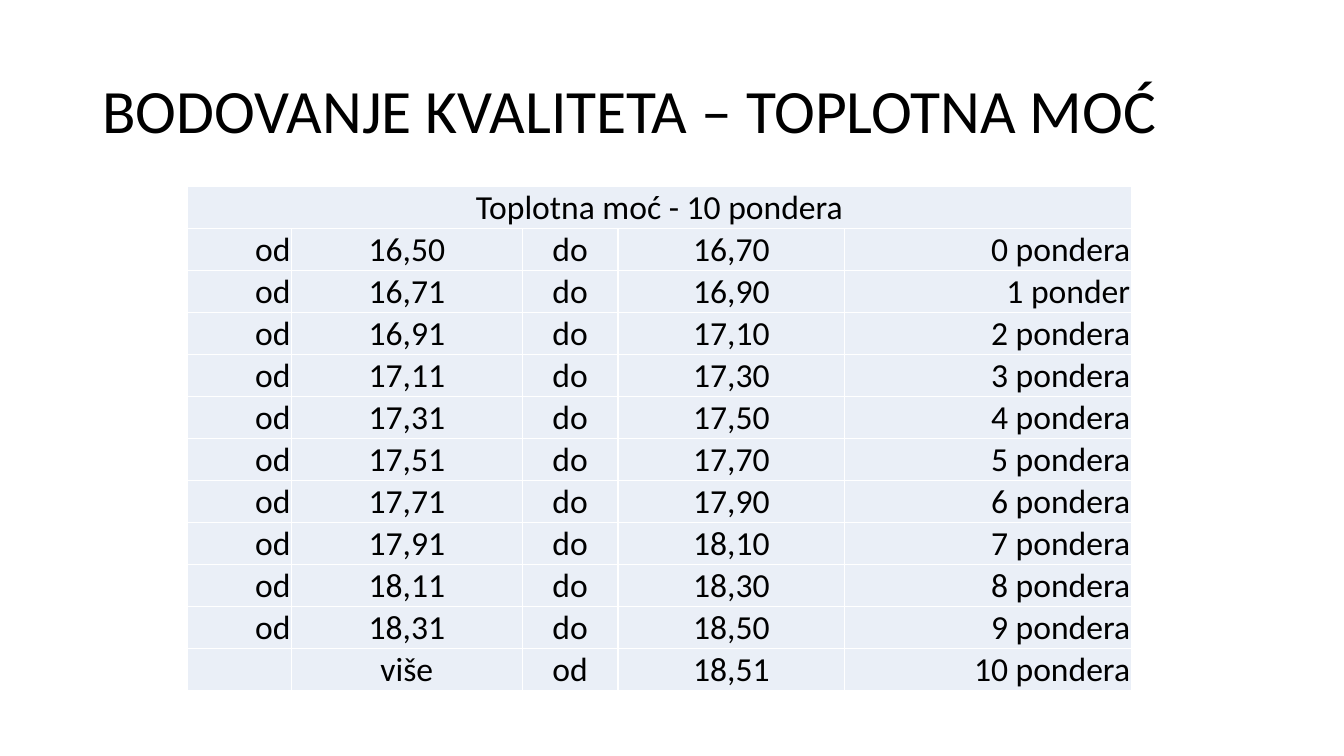
"""Build the slide that scores heating value in ten weighted bands."""
from dataclasses import dataclass

from lxml import etree
from pptx import Presentation
from pptx.dml.color import RGBColor
from pptx.enum.text import MSO_ANCHOR, MSO_AUTO_SIZE, PP_ALIGN
from pptx.oxml.ns import qn
from pptx.shapes.autoshape import Shape
from pptx.slide import Slide
from pptx.table import _Cell
from pptx.text.text import _Paragraph
from pptx.util import Pt

LEFT, CENTER, RIGHT = PP_ALIGN.LEFT, PP_ALIGN.CENTER, PP_ALIGN.RIGHT
MIDDLE, BOTTOM = MSO_ANCHOR.MIDDLE, MSO_ANCHOR.BOTTOM
NO_AUTOFIT = MSO_AUTO_SIZE.NONE
TITLE_ONLY_LAYOUT = 5


@dataclass(frozen=True)
class Theme:
    font: str = "Calibri"
    ink: str = "000000"
    cell_fill: str = "EAEFF7"
    border: str = "FFFFFF"
    border_width: float = 1
    title_size: float = 44
    table_size: float = 24


@dataclass(frozen=True)
class Column:
    width: float
    alignment: PP_ALIGN


@dataclass(frozen=True)
class Band:
    cells: tuple[str, str, str, str, str]


THEME = Theme()
COLUMNS = (
    Column(74.2, RIGHT),
    Column(164.9, CENTER),
    Column(68.4, CENTER),
    Column(162, CENTER),
    Column(204.5, RIGHT),
)
TABLE_LEFT, TABLE_TOP, ROW_HEIGHT = 134, 133.2, 29.9
CELL_MARGIN = 0.72
FIRST_LOWER, FIRST_UPPER, BAND_STEP, BOUNDED_BANDS = 1650, 1670, 20, 10


def decimal_comma(hundredths: int) -> str:
    """Write hundredths as a number with a decimal comma."""
    return f"{hundredths // 100},{hundredths % 100:02d}"


def scoring_bands() -> list[Band]:
    """List the bounded bands and the open one above them."""
    bands = []
    lower, upper = FIRST_LOWER, FIRST_UPPER
    for points in range(BOUNDED_BANDS):
        unit = "ponder" if points == 1 else "pondera"
        bands.append(Band(("od", decimal_comma(lower), "do", decimal_comma(upper), f"{points} {unit}")))
        lower, upper = upper + 1, upper + BAND_STEP
    bands.append(Band(("", "više", "od", decimal_comma(lower), f"{BOUNDED_BANDS} pondera")))
    return bands


def style_paragraph(paragraph: _Paragraph, size: float, alignment: PP_ALIGN) -> None:
    """Apply the theme font and an alignment."""
    paragraph.alignment = alignment
    paragraph.font.size = Pt(size)
    for run in paragraph.runs:
        run.font.name = THEME.font
        run.font.size = Pt(size)
        run.font.color.rgb = RGBColor.from_string(THEME.ink)


def add_borders(cell: _Cell) -> None:
    """Draw the theme border on all four sides of a cell."""
    properties = cell._tc.get_or_add_tcPr()
    for position, side in enumerate(("a:lnL", "a:lnR", "a:lnT", "a:lnB")):
        line = etree.Element(qn(side), w=str(Pt(THEME.border_width)))
        fill = etree.SubElement(line, qn("a:solidFill"))
        etree.SubElement(fill, qn("a:srgbClr"), val=THEME.border)
        properties.insert(position, line)


def fill_cell(cell: _Cell, text: str, alignment: PP_ALIGN) -> None:
    """Set the text and the look of a table cell."""
    cell.text_frame.text = text
    style_paragraph(cell.text_frame.paragraphs[0], THEME.table_size, alignment)
    cell.vertical_anchor = BOTTOM
    cell.margin_left = cell.margin_right = cell.margin_top = Pt(CELL_MARGIN)
    cell.margin_bottom = Pt(0)
    cell.fill.solid()
    cell.fill.fore_color.rgb = RGBColor.from_string(THEME.cell_fill)
    add_borders(cell)


def place_title(title: Shape) -> None:
    """Position and format the slide title."""
    title.left, title.top, title.width, title.height = Pt(66), Pt(28.8), Pt(828), Pt(104.4)
    frame = title.text_frame
    frame.text = "BODOVANJE KVALITETA – TOPLOTNA MOĆ"
    frame.auto_size = NO_AUTOFIT
    frame.vertical_anchor = MIDDLE
    frame.paragraphs[0].line_spacing = 0.9
    style_paragraph(frame.paragraphs[0], THEME.title_size, LEFT)


def add_scoring_table(slide: Slide, bands: list[Band]) -> None:
    """Add the heading row and one row per band."""
    row_count = len(bands) + 1
    table = slide.shapes.add_table(
        row_count, len(COLUMNS), Pt(TABLE_LEFT), Pt(TABLE_TOP),
        Pt(sum(column.width for column in COLUMNS)), Pt(row_count * ROW_HEIGHT),
    ).table
    table.first_row = table.horz_banding = False
    for row in table.rows:
        row.height = Pt(ROW_HEIGHT)
    for index, column in enumerate(COLUMNS):
        table.columns[index].width = Pt(column.width)
        fill_cell(table.cell(0, index), "", CENTER)
        for row_index, band in enumerate(bands, start=1):
            fill_cell(table.cell(row_index, index), band.cells[index], column.alignment)
    heading = table.cell(0, 0)
    heading.merge(table.cell(0, len(COLUMNS) - 1))
    heading.text_frame.text = "Toplotna moć - 10 pondera"
    style_paragraph(heading.text_frame.paragraphs[0], THEME.table_size, CENTER)


def main() -> None:
    """Build and save the presentation."""
    presentation = Presentation()
    presentation.slide_width, presentation.slide_height = Pt(960), Pt(540)
    slide = presentation.slides.add_slide(presentation.slide_layouts[TITLE_ONLY_LAYOUT])
    place_title(slide.shapes.title)
    add_scoring_table(slide, scoring_bands())
    presentation.save("out.pptx")


if __name__ == "__main__":
    main()
